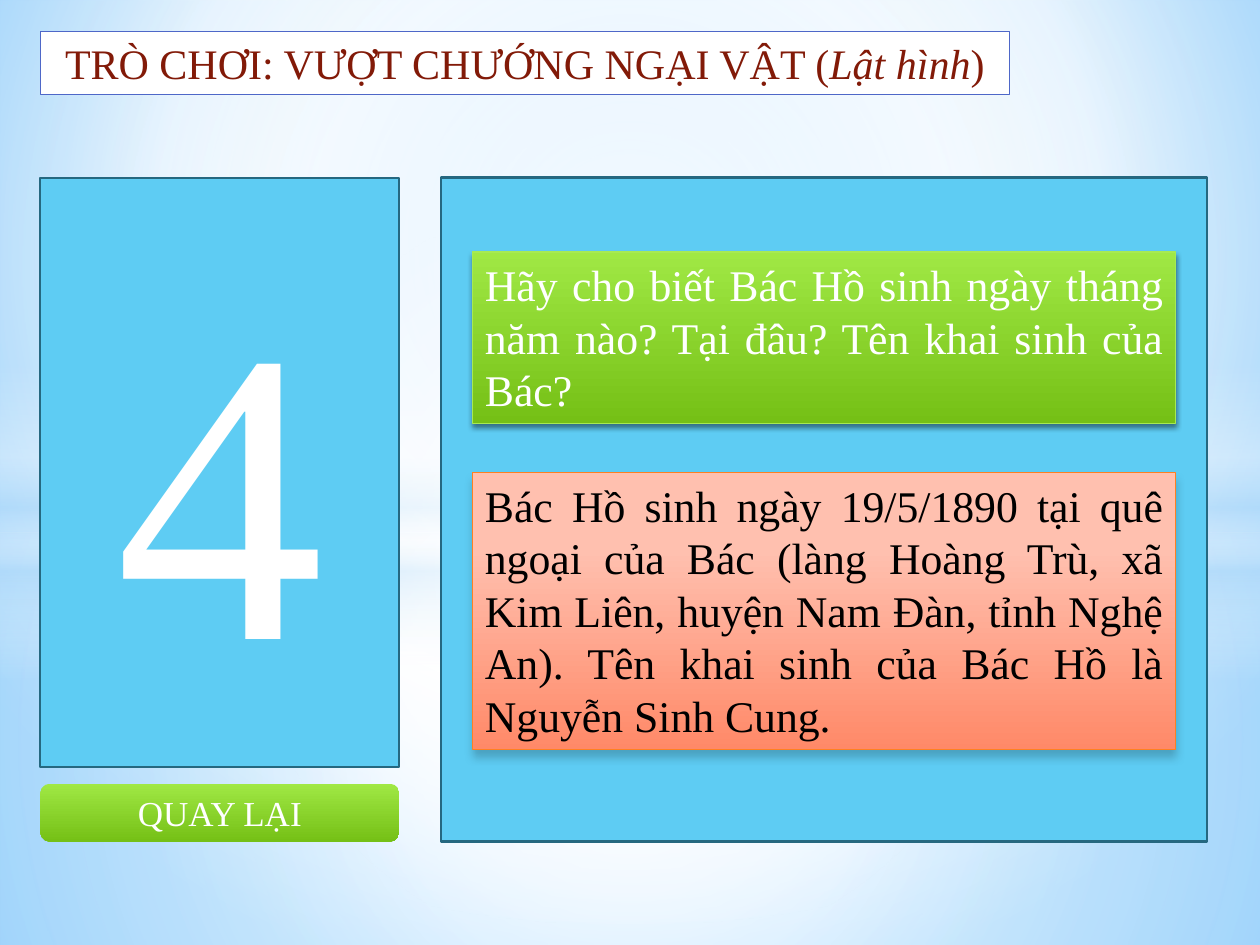
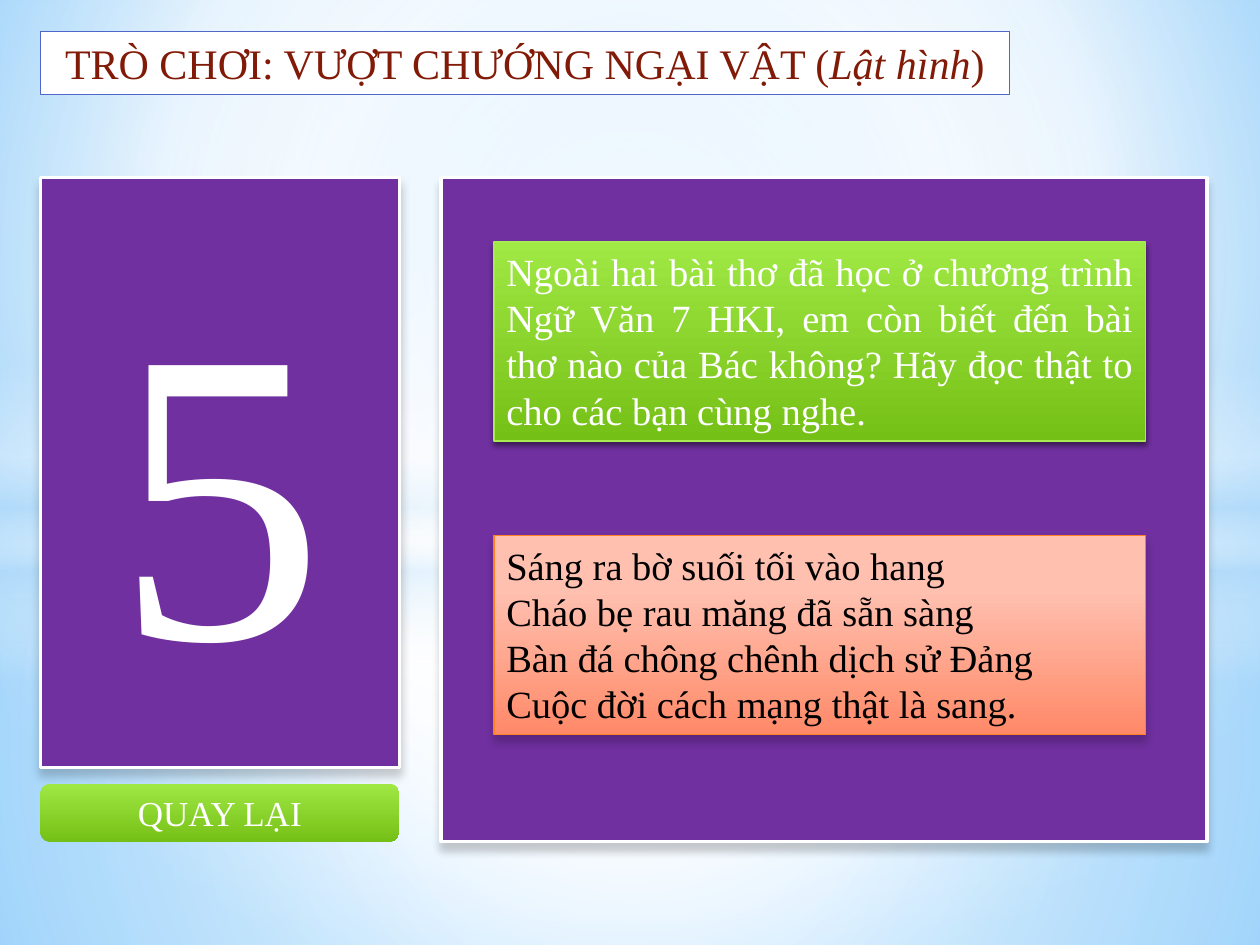
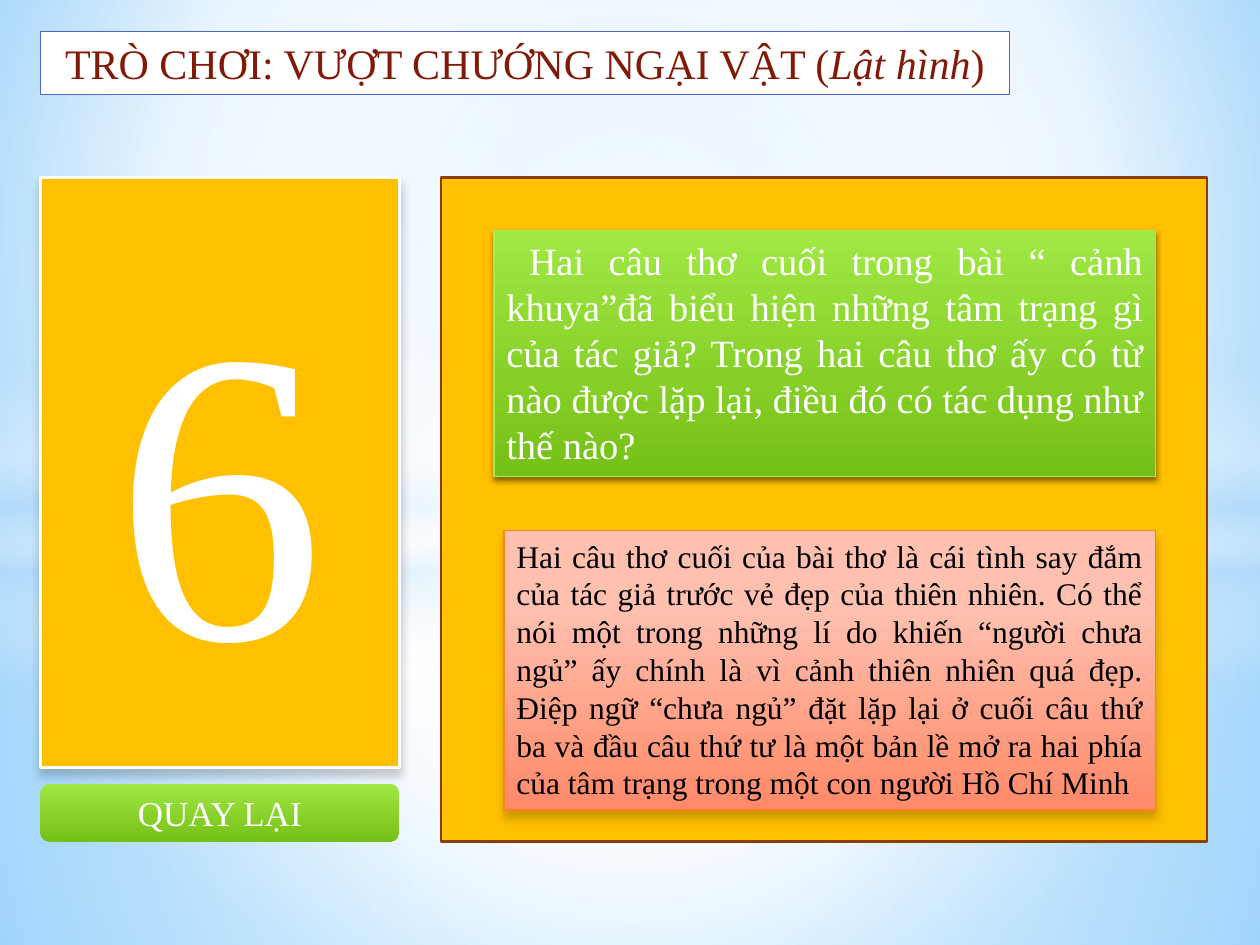
from lxml.etree import SubElement
from pptx import Presentation
from pptx.dml.color import RGBColor
from pptx.enum.shapes import MSO_SHAPE
from pptx.enum.text import MSO_ANCHOR, MSO_AUTO_SIZE, PP_ALIGN
from pptx.oxml.ns import qn
from pptx.util import Inches, Pt

FONT = "Times New Roman"
WHITE = RGBColor(0xFF, 0xFF, 0xFF)
BLACK = RGBColor(0, 0, 0)
TITLE_RED = RGBColor(0x82, 0x1A, 0x08)
TITLE_LINE = RGBColor(0x4E, 0x67, 0xC8)
SKY = RGBColor(0x5E, 0xCC, 0xF3)
SKY_DARK = RGBColor(0x25, 0x68, 0x80)
PURPLE = RGBColor(0x70, 0x30, 0xA0)
AMBER = RGBColor(0xFF, 0xC0, 0x00)
BROWN = RGBColor(0x8B, 0x3D, 0x02)
LIME_LINE = RGBColor(0xA7, 0xEA, 0x52)
ORANGE_LINE = RGBColor(0xFF, 0x80, 0x21)
PALE_BLUE = RGBColor(0xB4, 0xDC, 0xFA)
BG_INNER = RGBColor(0x9E, 0xD5, 0xFF)
BG_OUTER = RGBColor(0x5B, 0xB9, 0xFF)
LIME = [(0, RGBColor(0xA0, 0xE8, 0x44), 100), (100, RGBColor(0x75, 0xC0, 0x16), 100)]
SALMON = [(28, RGBColor(0xFF, 0xC0, 0xAF), 100), (100, RGBColor(0xFF, 0x89, 0x68), 100)]

CENTER = (50, 50, 50, 50)
SOFT_SHADOW = (20, 5, 4)
TIGHT_SHADOW = (45, 3.1, 1.8)

LEFT, CARD_TOP, CARD_W = 0.32, 1.41, 2.85
WHITE_FRAME = (WHITE, 2, SOFT_SHADOW)
SKY_FRAME = (SKY_DARK, 1.25, None)
BROWN_FRAME = (BROWN, 1.25, None)


def add_color(parent, color, alpha):
    clr = SubElement(parent, qn("a:srgbClr"), val=str(color))
    if alpha < 100:
        SubElement(clr, qn("a:alpha"), val=str(alpha * 1000))


def set_gradient(fill, parent, stops, focus=None):
    fill.solid()
    solid = parent.find(qn("a:solidFill"))
    grad = SubElement(parent, qn("a:gradFill"), rotWithShape="1")
    parent.replace(solid, grad)
    gs_list = SubElement(grad, qn("a:gsLst"))
    for pos, color, alpha in stops:
        add_color(SubElement(gs_list, qn("a:gs"), pos=str(pos * 1000)), color, alpha)
    if focus:
        circle = SubElement(grad, qn("a:path"), {"path": "circle"})
        edges = {side: str(v * 1000) for side, v in zip("ltrb", focus)}
        SubElement(circle, qn("a:fillToRect"), edges)
    else:
        SubElement(grad, qn("a:lin"), ang="5400000", scaled="0")


def add_box(slide, at, fill, frame=None, kind=MSO_SHAPE.RECTANGLE, focus=None):
    s = slide.shapes.add_shape(kind, *(Inches(v) for v in at))
    s.shadow.inherit = False
    spPr = s._element.spPr
    if isinstance(fill, list):
        set_gradient(s.fill, spPr, fill, focus)
    else:
        s.fill.solid()
        s.fill.fore_color.rgb = fill
    if frame is None:
        s.line.fill.background()
        return s
    color, width, shadow = frame
    s.line.color.rgb = color
    s.line.width = Pt(width)
    if shadow:
        alpha, blur, dist = shadow
        outer = SubElement(spPr.find(qn("a:effectLst")), qn("a:outerShdw"),
                           blurRad=str(Pt(blur)), dist=str(Pt(dist)),
                           dir="5400000", rotWithShape="0")
        add_color(outer, BLACK, alpha)
    return s


def write(s, lines, size, color, align=PP_ALIGN.CENTER, grow=False):
    tf = s.text_frame
    tf.word_wrap = True
    tf.vertical_anchor = MSO_ANCHOR.TOP if grow else MSO_ANCHOR.MIDDLE
    if grow:
        tf.auto_size = MSO_AUTO_SIZE.SHAPE_TO_FIT_TEXT
    for i, line in enumerate(lines):
        p = tf.add_paragraph() if i else tf.paragraphs[0]
        p.alignment = align
        p.font.name = FONT
        p.font.size = Pt(size)
        p.font.color.rgb = color
        for text in line if isinstance(line, tuple) else (line,):
            r = p.add_run()
            r.text = text
            r.font.name = FONT
            r.font.size = Pt(size)
            r.font.color.rgb = color
    return tf


def set_background(prs):
    master = prs.slide_master
    fill = master.background.fill
    fill.solid()
    bgPr = master.element.find(".//" + qn("p:bgPr"))
    stops = [(0, BG_INNER, 100), (60, WHITE, 100), (100, BG_OUTER, 100)]
    set_gradient(fill, bgPr, stops, (20, 10, 20, 60))


def add_glow(slide):
    add_box(slide, (0, 4.23, 10, 3.27),
            [(0, WHITE, 91), (37, WHITE, 76), (100, PALE_BLUE, 79)], focus=CENTER)
    add_box(slide, (0, 0, 10, 4.23),
            [(0, WHITE, 89), (48, WHITE, 62), (100, PALE_BLUE, 79)], focus=CENTER)
    add_box(slide, (0, 2.9, 10, 2.5),
            [(0, WHITE, 0), (29, WHITE, 30), (45, PALE_BLUE, 40),
             (55, WHITE, 26), (65, PALE_BLUE, 60), (100, WHITE, 0)])
    add_box(slide, (0, 1.75, 10, 5.58), [(0, WHITE, 100), (54, WHITE, 0)],
            kind=MSO_SHAPE.OVAL, focus=CENTER)


def add_title(slide):
    s = add_box(slide, (LEFT, 0.25, 7.69, 0.5), WHITE, (TITLE_LINE, 0.75, None))
    tf = write(s, [("TRÒ CHƠI: VƯỢT CHƯỚNG NGẠI VẬT (", "Lật hình", ")")],
               24, TITLE_RED, grow=True)
    tf.paragraphs[0].runs[1].font.italic = True


def add_back_button(slide):
    s = add_box(slide, (LEFT, 6.22, CARD_W, 0.46), LIME, kind=MSO_SHAPE.ROUNDED_RECTANGLE)
    write(s, ["QUAY LẠI"], 20, WHITE)


def add_cards(slide, number, color, number_frame, panel_frame):
    s = add_box(slide, (LEFT, CARD_TOP, CARD_W, 4.68), color, number_frame)
    write(s, [number], 239, WHITE)
    add_box(slide, (3.5, CARD_TOP, 6.08, 5.27), color, panel_frame)


def add_question(slide, at, lines, size):
    s = add_box(slide, at, LIME, (LIME_LINE, 0.75, TIGHT_SHADOW))
    return write(s, lines, size, WHITE, PP_ALIGN.JUSTIFY, True)


def add_answer(slide, at, lines, size, align=PP_ALIGN.JUSTIFY):
    s = add_box(slide, at, SALMON, (ORANGE_LINE, 0.75, SOFT_SHADOW))
    write(s, lines, size, BLACK, align, True)


def add_game_slide(prs, number, color, number_frame, panel_frame):
    slide = prs.slides.add_slide(prs.slide_layouts[6])
    add_glow(slide)
    add_title(slide)
    add_back_button(slide)
    add_cards(slide, number, color, number_frame, panel_frame)
    return slide


def main():
    prs = Presentation()
    prs.slide_width, prs.slide_height = Inches(10), Inches(7.5)
    set_background(prs)

    slide = add_game_slide(prs, "4", SKY, SKY_FRAME, SKY_FRAME)
    add_question(slide, (3.75, 2, 5.58, 1.36), [
        "Hãy cho biết Bác Hồ sinh ngày tháng năm nào? Tại đâu? "
        "Tên khai sinh của Bác?"], 25)
    add_answer(slide, (3.75, 3.75, 5.58, 2.2), [
        "Bác Hồ sinh ngày 19/5/1890 tại quê ngoại của Bác (làng Hoàng Trù, "
        "xã Kim Liên, huyện Nam Đàn, tỉnh Nghệ An). Tên khai sinh của Bác Hồ "
        "là Nguyễn Sinh Cung."], 25)

    slide = add_game_slide(prs, "5", PURPLE, WHITE_FRAME, WHITE_FRAME)
    add_question(slide, (3.92, 1.92, 5.17, 1.58), [
        "Ngoài hai bài thơ đã học ở chương trình Ngữ Văn 7 HKI, em còn biết "
        "đến bài thơ nào của Bác không? Hãy đọc thật to cho các bạn cùng nghe."], 22)
    add_answer(slide, (3.92, 4.25, 5.17, 1.58), [
        "Sáng ra bờ suối tối vào hang",
        "Cháo bẹ rau măng đã sẵn sàng",
        "Bàn đá chông chênh dịch sử Đảng",
        "Cuộc đời cách mạng thật là sang."], 22, PP_ALIGN.LEFT)

    slide = add_game_slide(prs, "6", AMBER, WHITE_FRAME, BROWN_FRAME)
    tf = add_question(slide, (3.92, 1.83, 5.25, 1.95), [(
        " ",
        "Hai câu thơ cuối trong bài “ cảnh khuya”đã biểu hiện những tâm trạng "
        "gì của tác giả? Trong hai câu thơ ấy có từ nào được lặp lại, điều đó "
        "có tác dụng như thế nào?")], 22)
    lead = tf.paragraphs[0].runs[0].font
    lead.name, lead.size = "Karla", Pt(18)
    add_answer(slide, (4, 4.21, 5.17, 2.22), [
        "Hai câu thơ cuối của bài thơ là cái tình say đắm của tác giả trước vẻ "
        "đẹp của thiên nhiên. Có thể nói một trong những lí do khiến “người "
        "chưa ngủ” ấy chính là vì cảnh thiên nhiên quá đẹp. Điệp ngữ “chưa "
        "ngủ” đặt lặp lại ở cuối câu thứ ba và đầu câu thứ tư là một bản lề mở "
        "ra hai phía của tâm trạng trong một con người Hồ Chí Minh"], 18)

    prs.save("out.pptx")


if __name__ == "__main__":
    main()
